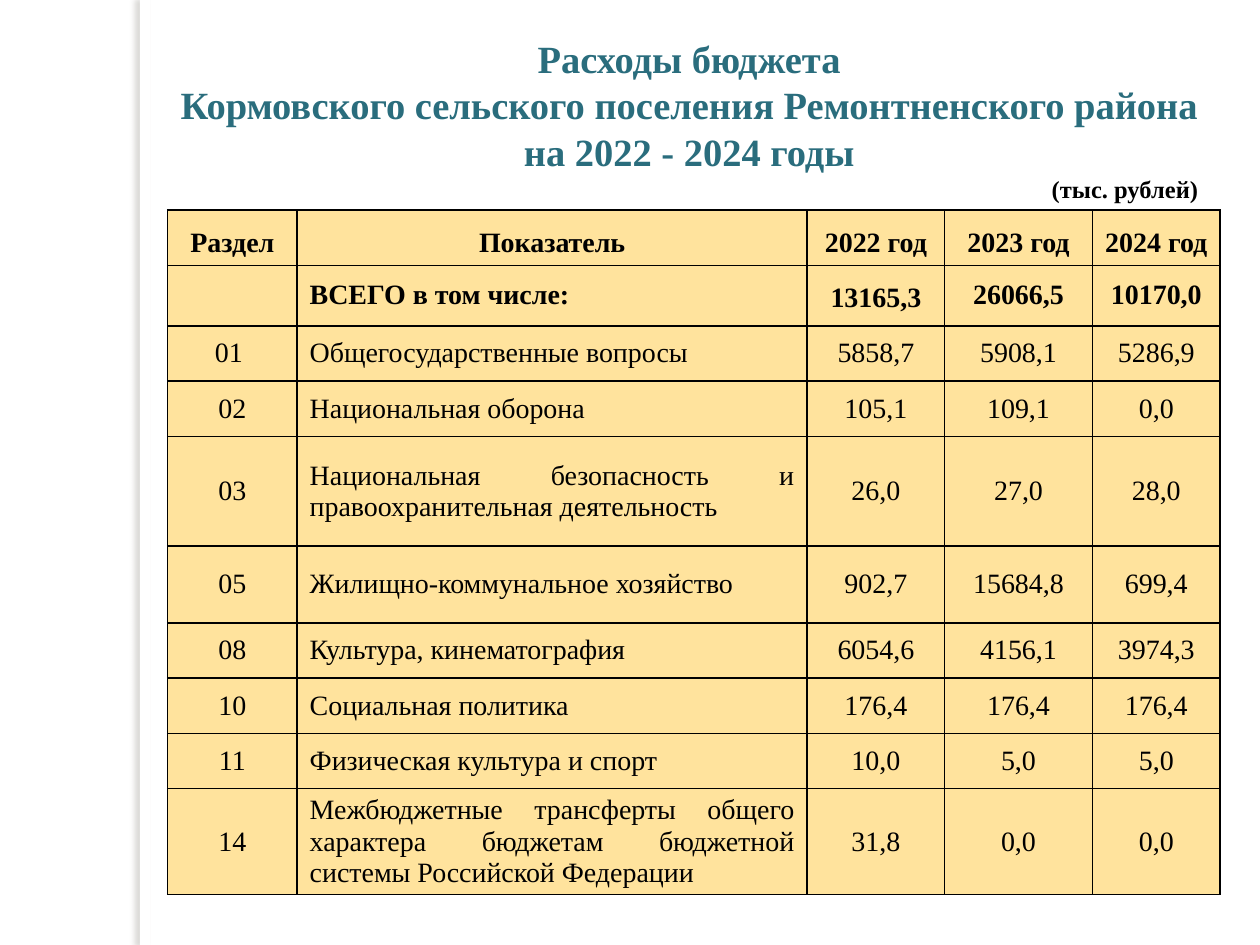
import pptx
import pptx.dml.color
import pptx.enum.shapes
import pptx.enum.text
import pptx.oxml
import pptx.oxml.ns
import pptx.util

Pt = pptx.util.Pt
ALIGN = pptx.enum.text.PP_ALIGN
ANCHOR = pptx.enum.text.MSO_ANCHOR
NS = pptx.oxml.ns.nsdecls("a")


def color(code):
    return pptx.dml.color.RGBColor.from_string(code)


def write(para, text, size=16, bold=False, ink="000000", align=ALIGN.CENTER, space=None):
    """Fill a paragraph; a line feed in the text becomes a line break."""
    para.alignment = align
    para.line_spacing = space
    for i, line in enumerate(text.split("\n")):
        if i:
            para.add_line_break()
        run = para.add_run()
        run.text = line
        run.font.name = "Times New Roman"
        run.font.size = Pt(size)
        run.font.bold = bold
        run.font.color.rgb = color(ink)


deck = pptx.Presentation()
deck.slide_width, deck.slide_height = Pt(720), Pt(540)
slide = deck.slides.add_slide(deck.slide_layouts[6])

# Vertical strip with a soft shadow to its left
strip = slide.shapes.add_shape(
    pptx.enum.shapes.MSO_SHAPE.RECTANGLE, Pt(80), Pt(0), Pt(6), Pt(540))
strip.fill.solid()
strip.fill.fore_color.rgb = color("FFFFFF")
strip.line.fill.background()
shadow = pptx.oxml.parse_xml(
    f'<a:effectLst {NS}><a:outerShdw blurRad="{Pt(3)}" dist="{Pt(3)}" dir="10800000" '
    'algn="tl" rotWithShape="0"><a:srgbClr val="736F63"><a:alpha val="25000"/>'
    '</a:srgbClr></a:outerShdw></a:effectLst>')
strip.element.spPr.append(shadow)

# Budget table
rows = [
    ("Раздел", "Показатель", "2022 год", "2023 год", "2024 год"),
    ("", "ВСЕГО в том числе:", "13165,3", "26066,5", "10170,0"),
    ("01 ", "Общегосударственные вопросы", "5858,7", "5908,1", "5286,9"),
    ("02", "Национальная оборона", "105,1", "109,1", "0,0"),
    ("03", "Национальная безопасность и правоохранительная деятельность",
     "26,0", "27,0", "28,0"),
    ("05", "Жилищно-коммунальное хозяйство", "902,7", "15684,8", "699,4"),
    ("08", "Культура, кинематография", "6054,6", "4156,1", "3974,3"),
    ("10", "Социальная политика", "176,4", "176,4", "176,4"),
    ("11", "Физическая культура и спорт", "10,0", "5,0", "5,0"),
    ("14", "Межбюджетные трансферты общего характера бюджетам "
           "бюджетной системы Российской Федерации", "31,8", "0,0", "0,0"),
]
widths = [74, 291.5, 78.5, 84.5, 73]
heights = [31.6] * len(rows)
heights[1], heights[4], heights[5], heights[9] = 34.6, 62.8, 43.8, 60

table = slide.shapes.add_table(
    len(rows), len(widths), Pt(95.8), Pt(120), Pt(sum(widths)), Pt(sum(heights))).table
for col, width in zip(table.columns, widths):
    col.width = Pt(width)
for r, (row, height) in enumerate(zip(rows, heights)):
    table.rows[r].height = Pt(height)
    for c, text in enumerate(row):
        cell = table.cell(r, c)
        for side in "LRTB":
            cell._tc.get_or_add_tcPr().append(pptx.oxml.parse_xml(
                f'<a:ln{side} {NS} w="{Pt(1)}"><a:solidFill><a:srgbClr val="000000"/>'
                f'</a:solidFill></a:ln{side}>'))
        cell.fill.solid()
        cell.fill.fore_color.rgb = color("FFE39D")
        cell.vertical_anchor = ANCHOR.MIDDLE if r else ANCHOR.BOTTOM
        tight = c > 1 and (r > 1 or (r, c) == (1, 2))
        cell.margin_left = cell.margin_right = Pt(5 if tight else 7.2)
        cell.margin_top = Pt(0 if r and c > 1 else 3.6)
        cell.margin_bottom = Pt(0 if tight else 3.6)
        align = ALIGN.CENTER
        if r and c == 1:
            align = ALIGN.JUSTIFY if r in (4, 9) else ALIGN.LEFT
        write(cell.text_frame.paragraphs[0], text, bold=r < 2, align=align,
              space=1.15 if r == 1 and c > 1 else None)

# Title and unit
frame = slide.shapes.add_textbox(Pt(95.8), Pt(16.6), Pt(596), Pt(126)).text_frame
frame.word_wrap = True
write(frame.paragraphs[0],
      "Расходы бюджета\n"
      "Кормовского сельского поселения Ремонтненского района на 2022 - 2024 годы",
      size=22, bold=True, ink="2A6D7D")
write(frame.add_paragraph(), "(тыс. рублей)", size=14, bold=True, align=ALIGN.RIGHT)

deck.save("out.pptx")
